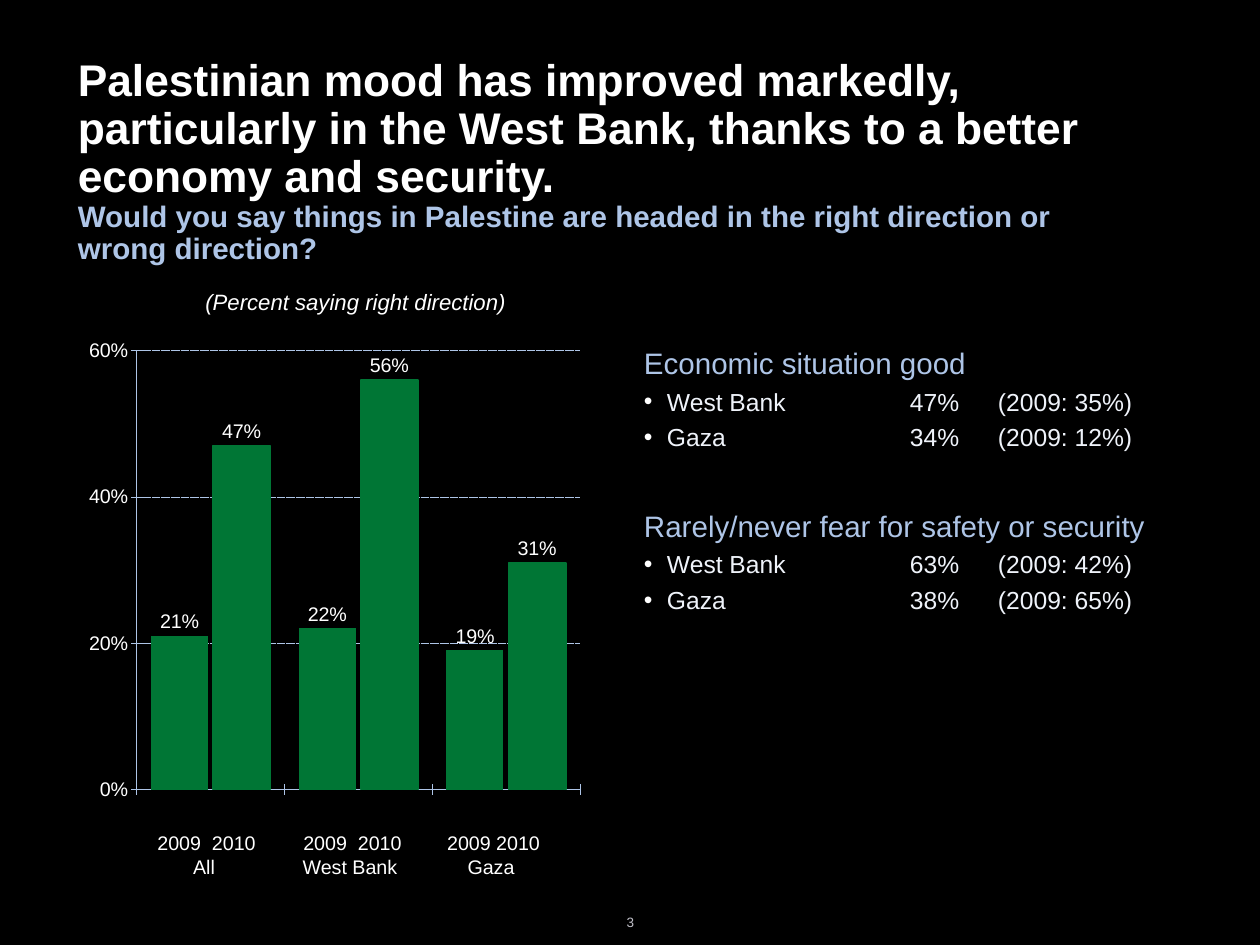
"""Build the slide on Palestinian mood with its chart and survey figures."""
from dataclasses import dataclass

import lxml.etree
import pptx
import pptx.chart.data
import pptx.dml.color
import pptx.enum.chart
import pptx.enum.dml
import pptx.enum.text
import pptx.oxml
import pptx.oxml.ns
import pptx.util

PX = 10320
FONT = "Arial"
COLORS = {
    "black": "000000",
    "white": "FFFFFF",
    "blue": "AEC5E7",
    "pale": "EFF3FA",
    "green": "007635",
    "gray": "BFBEC7",
}
ALIGN = pptx.enum.text.PP_ALIGN


@dataclass(frozen=True)
class Box:
    x: int
    y: int
    w: int
    h: int

    def emu(self) -> tuple:
        return tuple(pptx.util.Emu(v * PX) for v in (self.x, self.y, self.w, self.h))


@dataclass(frozen=True)
class YearLabel:
    box: Box
    region: str
    gap: int


@dataclass(frozen=True)
class Finding:
    heading: str
    before: float
    rows: tuple


YEAR_LABELS = (
    YearLabel(Box(136, 827, 136, 57), "All", 445),
    YearLabel(Box(278, 827, 144, 57), "West Bank", 445),
    YearLabel(Box(423, 827, 136, 57), "Gaza", 0),
)
FINDINGS = (
    Finding("Economic situation good", 0,
            (("West Bank", "47%", "(2009: 35%)"), ("Gaza", "34%", "(2009: 12%)"))),
    Finding("Rarely/never fear for safety or security", 43,
            (("West Bank", "63%", "(2009: 42%)"), ("Gaza", "38%", "(2009: 65%)"))),
)
SERIES = {"Series 1": (0.21, 0.22, 0.19), "Series 2": (0.47, 0.56, 0.31)}
PLOT = {"x": 0.127, "y": 0.02, "w": 0.871, "h": 0.772}


def rgb(name: str) -> pptx.dml.color.RGBColor:
    return pptx.dml.color.RGBColor.from_string(COLORS[name])


def style_font(font, size: float, color: str, bold: bool = False, italic: bool = False) -> None:
    font.name = FONT
    font.size = pptx.util.Pt(size)
    font.bold = bold
    font.italic = italic
    font.color.rgb = rgb(color)


def add_run(p, text: str, size: float, color: str, bold: bool = False, italic: bool = False):
    r = p.add_run()
    r.text = text
    style_font(r.font, size, color, bold, italic)
    return r


def add_text_box(slide, box: Box):
    tf = slide.shapes.add_textbox(*box.emu()).text_frame
    tf.word_wrap = True
    return tf


def add_caption(slide, box: Box, text: str, size: float, color: str, italic: bool = False) -> None:
    p = add_text_box(slide, box).paragraphs[0]
    p.alignment = ALIGN.CENTER
    add_run(p, text, size, color, italic=italic)


def add_title(slide) -> None:
    sp = slide.shapes.title
    sp.left, sp.top, sp.width, sp.height = Box(69, 54, 1128, 158).emu()
    tf = sp.text_frame
    tf.word_wrap = True
    tf.auto_size = pptx.enum.text.MSO_AUTO_SIZE.NONE
    tf.vertical_anchor = pptx.enum.text.MSO_ANCHOR.TOP
    headline, question = tf.paragraphs[0], tf.add_paragraph()
    for p in (headline, question):
        p.alignment = ALIGN.LEFT
        p.line_spacing = 0.9
        p.space_before = pptx.util.Pt(0)
    add_run(headline, "Palestinian mood has improved markedly, particularly in the West Bank, "
            "thanks to a better economy and security.", 36, "white", bold=True)
    add_run(question, "Would you say things in Palestine are headed in the right direction or",
            24, "blue", bold=True)
    question.add_line_break()
    add_run(question, "wrong direction?", 24, "blue", bold=True)


def add_bullet(p) -> None:
    pPr = p._p.get_or_add_pPr()
    pPr.set("marL", str(23 * PX))
    pPr.set("indent", str(-23 * PX))
    ns = pptx.oxml.ns.nsdecls("a")
    for xml in (
        f'<a:buClr {ns}><a:srgbClr val="{COLORS["white"]}"/></a:buClr>',
        f'<a:buFont {ns} typeface="{FONT}"/>',
        f'<a:buChar {ns} char="•"/>',
        f'<a:tabLst {ns}><a:tab pos="{266 * PX}" algn="l"/>'
        f'<a:tab pos="{354 * PX}" algn="l"/></a:tabLst>',
    ):
        pPr.append(pptx.oxml.parse_xml(xml))


def add_findings(slide) -> None:
    tf = add_text_box(slide, Box(644, 345, 557, 405))
    tf.margin_left = tf.margin_top = tf.margin_right = tf.margin_bottom = 0
    for i, finding in enumerate(FINDINGS):
        p = tf.add_paragraph() if i else tf.paragraphs[0]
        p.space_before = pptx.util.Pt(finding.before)
        p.space_after = pptx.util.Pt(2.5)
        add_run(p, finding.heading, 24, "blue")
        for row in finding.rows:
            p = tf.add_paragraph()
            add_bullet(p)
            p.space_before = p.space_after = pptx.util.Pt(2.5)
            add_run(p, "\t".join(row), 20, "pale")


def add_year_label(slide, label: YearLabel) -> None:
    tf = add_text_box(slide, label.box)
    years, region = tf.paragraphs[0], tf.add_paragraph()
    years.alignment = region.alignment = ALIGN.CENTER
    years._p.get_or_add_pPr().set("marL", str(5 * PX))
    add_run(years, "2009", 16, "white")
    space = add_run(years, " ", 16, "white")
    space._r.get_or_add_rPr().set("spc", str(label.gap))
    add_run(years, "2010", 16, "white")
    add_run(region, label.region, 16, "white")


def style_line(line, color: str, width: float) -> None:
    line.color.rgb = rgb(color)
    line.width = pptx.util.Pt(width)


def set_plot_layout(chart) -> None:
    area = chart._chartSpace.chart.plotArea
    for old in area.findall(pptx.oxml.ns.qn("c:layout")):
        area.remove(old)
    layout = lxml.etree.Element(pptx.oxml.ns.qn("c:layout"))
    manual = lxml.etree.SubElement(layout, pptx.oxml.ns.qn("c:manualLayout"))
    values = {"layoutTarget": "inner", "xMode": "edge", "yMode": "edge", **PLOT}
    for tag, value in values.items():
        lxml.etree.SubElement(manual, pptx.oxml.ns.qn(f"c:{tag}")).set("val", str(value))
    area.insert(0, layout)


def add_mood_chart(slide) -> None:
    data = pptx.chart.data.CategoryChartData(number_format="0%")
    data.categories = ["1", "2", "3"]
    for name, values in SERIES.items():
        data.add_series(name, values)
    kind = pptx.enum.chart.XL_CHART_TYPE.COLUMN_CLUSTERED
    chart = slide.shapes.add_chart(kind, *Box(72, 339, 509, 569).emu(), data).chart
    chart.has_legend = chart.has_title = False
    style_font(chart.font, 16, "blue")
    set_plot_layout(chart)

    cat, val = chart.category_axis, chart.value_axis
    for axis, width in ((cat, 0.38), (val, 0.22)):
        axis.major_tick_mark = pptx.enum.chart.XL_TICK_MARK.CROSS
        style_line(axis.format.line, "blue", width)
    cat.tick_label_position = pptx.enum.chart.XL_TICK_LABEL_POSITION.NONE
    val.minimum_scale, val.maximum_scale, val.major_unit = 0, 0.6, 0.2
    val.tick_labels.number_format = "0%"
    val.tick_labels.number_format_is_linked = False
    style_font(val.tick_labels.font, 16, "white")
    grid = val.major_gridlines.format.line
    style_line(grid, "blue", 0.22)
    grid.dash_style = pptx.enum.dml.MSO_LINE.SQUARE_DOT

    plot = chart.plots[0]
    plot.gap_width, plot.overlap, plot.vary_by_categories = 50, -9, False
    for series in plot.series:
        series.format.fill.solid()
        series.format.fill.fore_color.rgb = rgb("green")
        labels = series.data_labels
        labels.show_value = True
        labels.position = pptx.enum.chart.XL_LABEL_POSITION.OUTSIDE_END
        labels.number_format = "0%"
        labels.number_format_is_linked = False
        style_font(labels.font, 16, "white")
    style_line(plot.series[1].format.line, "green", 1.5)


def main() -> None:
    prs = pptx.Presentation()
    prs.slide_width, prs.slide_height = Box(0, 0, 1260, 945).emu()[2:]
    slide = prs.slides.add_slide(prs.slide_layouts.get_by_name("Title Only"))
    slide.background.fill.solid()
    slide.background.fill.fore_color.rgb = rgb("black")
    add_title(slide)
    add_findings(slide)
    add_mood_chart(slide)
    for label in YEAR_LABELS:
        add_year_label(slide, label)
    add_caption(slide, Box(136, 284, 439, 35), "(Percent saying right direction)", 18, "white", True)
    add_caption(slide, Box(613, 910, 35, 26), "3", 11, "gray")
    prs.save("out.pptx")


if __name__ == "__main__":
    main()
